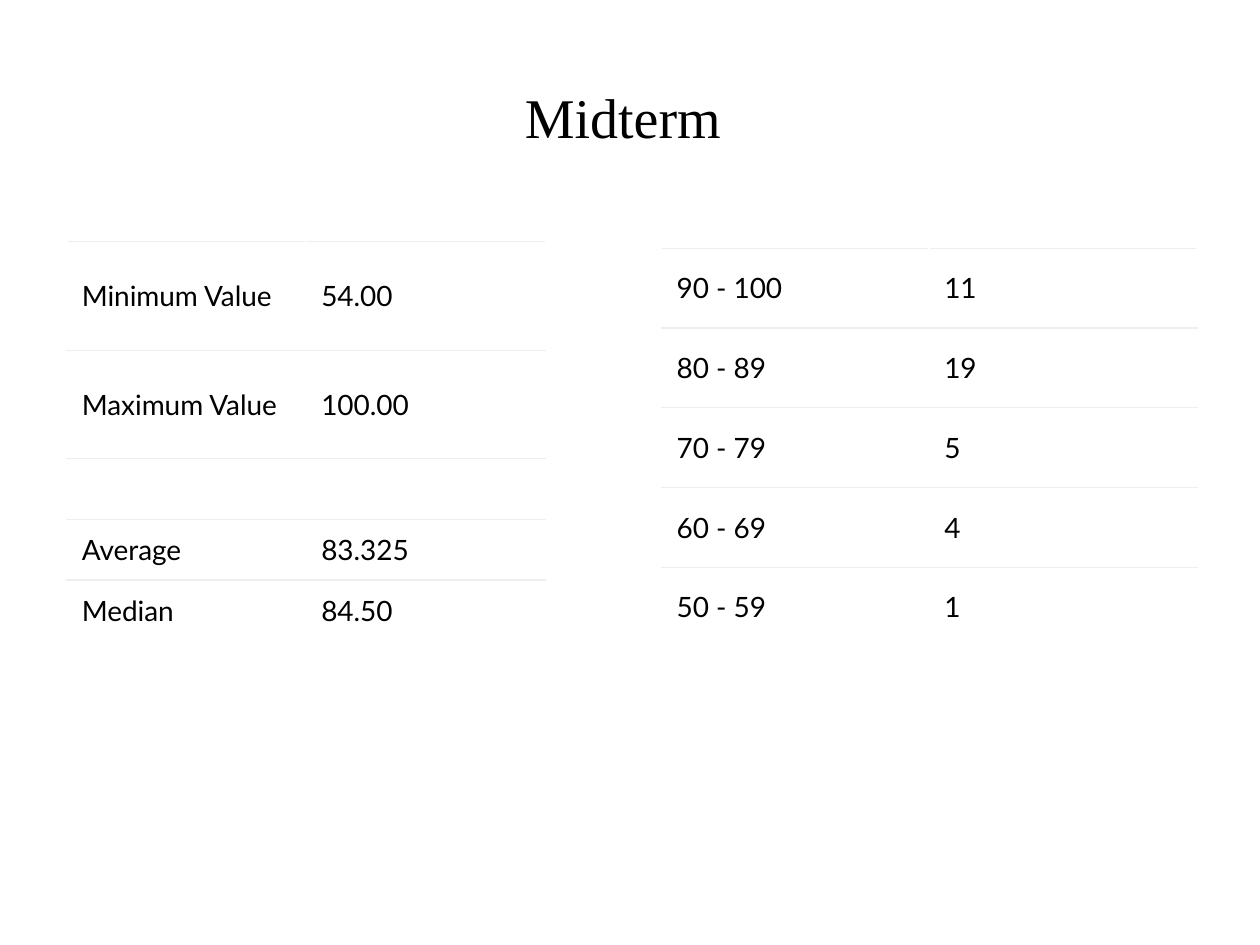
"""Build a slide with midterm statistics and the score distribution."""
from dataclasses import dataclass

import pptx
import pptx.dml.color
import pptx.enum.text
import pptx.oxml
import pptx.oxml.ns
import pptx.slide
import pptx.table
import pptx.text.text
import pptx.util

BLACK = pptx.dml.color.RGBColor(0x00, 0x00, 0x00)
WHITE = pptx.dml.color.RGBColor(0xFF, 0xFF, 0xFF)
RULE = pptx.dml.color.RGBColor(0xEE, 0xEE, 0xEE)
SLIDE_W, SLIDE_H = pptx.util.Inches(10), pptx.util.Inches(7.5)
GRID_COLS, GRID_ROWS = 100, 75


@dataclass(frozen=True)
class Grid:
    """A two-column table placed in grid units."""

    left: float
    top: float
    col_width: float
    row_heights: tuple[float, ...]
    rows: tuple[tuple[str, str], ...]


TABLES = (
    Grid(5.3, 19.2, 19, (8.6,) * 2 + (4.82,) * 3, (
        ("Minimum Value", "54.00"),
        ("Maximum Value", "100.00"),
        ("", ""),
        ("Average", "83.325"),
        ("Median", "84.50"),
    )),
    Grid(52.5, 19.7, 21.25, (6.33,) * 5, (
        ("90 - 100", "11"),
        ("80 - 89", "19"),
        ("70 - 79", "5"),
        ("60 - 69", "4"),
        ("50 - 59", "1"),
    )),
)


def col(n: float) -> int:
    """Return the length of n grid columns."""
    return round(SLIDE_W * n / GRID_COLS)


def row(n: float) -> int:
    """Return the length of n grid rows."""
    return round(SLIDE_H * n / GRID_ROWS)


def add_run(p: pptx.text.text._Paragraph, text: str, font: str, size: float) -> None:
    """Add a black run to a paragraph."""
    r = p.add_run()
    r.text = text
    r.font.name, r.font.size = font, pptx.util.Pt(size)
    r.font.color.rgb = BLACK


def add_border(cell: pptx.table._Cell, side: str) -> None:
    """Rule one side of a cell."""
    cell._tc.get_or_add_tcPr().append(pptx.oxml.parse_xml(
        f'<a:{side} {pptx.oxml.ns.nsdecls("a")} w="{pptx.util.Pt(0.75)}">'
        f'<a:solidFill><a:srgbClr val="{RULE}"/></a:solidFill></a:{side}>'
    ))


def fill_cell(cell: pptx.table._Cell, text: str, sides: tuple[str, ...]) -> None:
    """Format a cell and write its text."""
    for side in sides:
        add_border(cell, side)
    cell.fill.solid()
    cell.fill.fore_color.rgb = WHITE
    cell.vertical_anchor = pptx.enum.text.MSO_ANCHOR.MIDDLE
    cell.margin_left = cell.margin_right = pptx.util.Inches(0.12)
    cell.margin_top = cell.margin_bottom = pptx.util.Inches(0.04)
    if text:
        add_run(cell.text_frame.paragraphs[0], text, "Lato", 16)


def add_grid(s: pptx.slide.Slide, grid: Grid) -> None:
    """Draw a table with rules between its rows."""
    table = s.shapes.add_table(
        len(grid.rows), 2, col(grid.left), row(grid.top),
        col(2 * grid.col_width), row(sum(grid.row_heights)),
    ).table
    table.first_row = table.horz_banding = False
    for column in table.columns:
        column.width = col(grid.col_width)
    last = len(grid.rows) - 1
    for i, (height, values) in enumerate(zip(grid.row_heights, grid.rows)):
        table.rows[i].height = row(height)
        sides = ("lnT",) if i == last else ("lnT", "lnB")
        for j, text in enumerate(values):
            fill_cell(table.cell(i, j), text, sides)


def add_title(s: pptx.slide.Slide, text: str) -> None:
    """Place and write the slide title."""
    sp = s.shapes.title
    sp.left, sp.top, sp.width, sp.height = col(5), row(3), col(90), row(12.5)
    tf = sp.text_frame
    tf.vertical_anchor = pptx.enum.text.MSO_ANCHOR.MIDDLE
    p = tf.paragraphs[0]
    p.alignment = pptx.enum.text.PP_ALIGN.CENTER
    add_run(p, text, "Times New Roman", 32)


def main() -> None:
    """Build and save the presentation."""
    prs = pptx.Presentation()
    prs.slide_width, prs.slide_height = SLIDE_W, SLIDE_H
    s = prs.slides.add_slide(prs.slide_layouts.get_by_name("Title Only"))
    add_title(s, "Midterm ")
    for grid in TABLES:
        add_grid(s, grid)
    prs.save("out.pptx")


if __name__ == "__main__":
    main()
